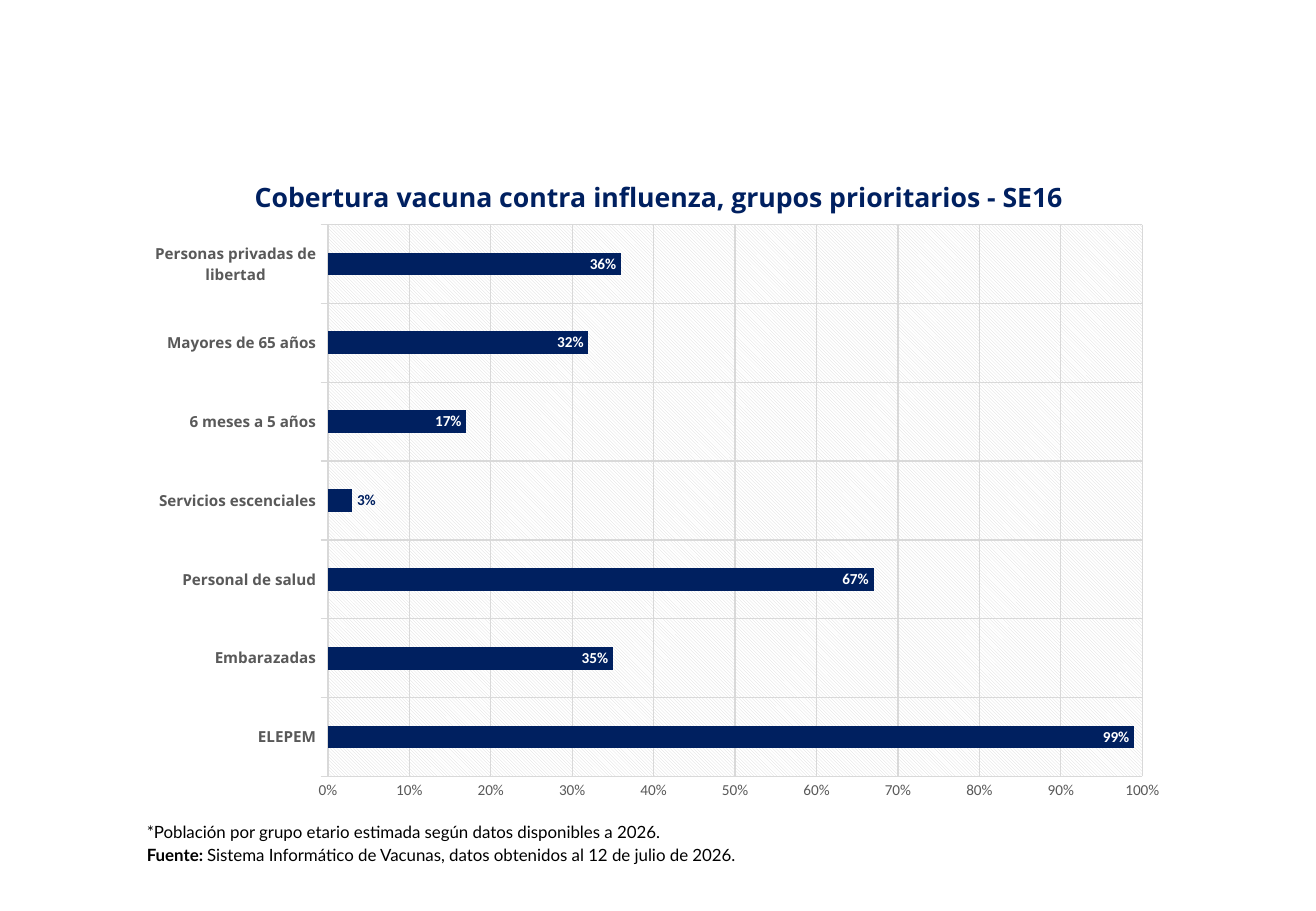
from dataclasses import dataclass

from pptx import Presentation, util as u
from pptx.chart.data import CategoryChartData
from pptx.dml.color import RGBColor
from pptx.enum import chart as ch, text
from pptx.oxml import parse_xml
from pptx.oxml.ns import nsdecls

PX = 9144  # 100 px to the inch
COLORS = {
    "navy": "002060",
    "grid": "D9D9D9",
    "axis": "595959",
    "white": "FFFFFF",
    "black": "000000",
}


@dataclass(frozen=True)
class Style:
    face: str
    size: float
    color: str
    bold: bool = False


@dataclass(frozen=True)
class Group:
    name: str
    coverage: float


@dataclass(frozen=True)
class Run:
    words: str
    bold: bool = False


TITLE = "Cobertura vacuna contra influenza, grupos prioritarios - SE16"
GROUPS = [
    Group("ELEPEM", 0.99),
    Group("Embarazadas", 0.35),
    Group("Personal de salud", 0.67),
    Group("Servicios escenciales", 0.03),
    Group("6 meses a 5 años", 0.17),
    Group("Mayores de 65 años", 0.32),
    Group("Personas privadas de libertad", 0.36),
]
SMALLEST_INSIDE = 0.05  # a shorter bar carries its label outside
NOTES = [
    [Run("*Población por grupo etario estimada según datos disponibles a 2026.")],
    [
        Run("Fuente: ", bold=True),
        Run("Sistema Informático de Vacunas, datos obtenidos al 12 de julio de 2026."),
    ],
]


def px(n: int) -> u.Emu:
    return u.Emu(n * PX)


def rgb(name: str) -> RGBColor:
    return RGBColor.from_string(COLORS[name])


def set_font(font, style: Style) -> None:
    font.name = style.face
    font.size = u.Pt(style.size)
    font.bold = style.bold
    font.color.rgb = rgb(style.color)


def set_grid_line(line) -> None:
    line.color.rgb = rgb("grid")
    line.width = u.Pt(0.75)


def place(parent, index: int, **fractions: float) -> None:
    """Fix a chart part's layout as fractions of the chart area."""
    for old in parent.xpath("c:layout"):
        parent.remove(old)
    target = '<c:layoutTarget val="inner"/>' if "w" in fractions else ""
    modes = "".join(f'<c:{k}Mode val="edge"/>' for k in fractions if k in "xy")
    sizes = "".join(f'<c:{k} val="{v}"/>' for k, v in fractions.items())
    parent.insert(index, parse_xml(
        f'<c:layout {nsdecls("c")}><c:manualLayout>{target}{modes}{sizes}'
        "</c:manualLayout></c:layout>"))


def fill_plot_area(plot_area) -> None:
    """Hatch the background behind the bars."""
    for old in plot_area.xpath("c:spPr"):
        plot_area.remove(old)
    plot_area.append(parse_xml(
        f'<c:spPr {nsdecls("c", "a")}><a:pattFill prst="ltDnDiag">'
        f'<a:fgClr><a:srgbClr val="{COLORS["grid"]}"/></a:fgClr>'
        f'<a:bgClr><a:srgbClr val="{COLORS["white"]}"/></a:bgClr>'
        "</a:pattFill><a:ln><a:noFill/></a:ln></c:spPr>"))


def style_axes(chart) -> None:
    cat, val = chart.category_axis, chart.value_axis
    for axis in (cat, val):
        axis.has_major_gridlines = True
        set_grid_line(axis.major_gridlines.format.line)
        axis.minor_tick_mark = ch.XL_TICK_MARK.NONE
    cat.major_tick_mark = ch.XL_TICK_MARK.OUTSIDE
    set_grid_line(cat.format.line)
    set_font(cat.tick_labels.font, Style("Open Sans", 9, "axis", True))

    val.major_tick_mark = ch.XL_TICK_MARK.NONE
    val.minimum_scale, val.maximum_scale, val.major_unit = 0, 1, 0.1
    val.format.line.fill.background()
    val.tick_labels.number_format = "0%"
    val.tick_labels.number_format_is_linked = False
    set_font(val.tick_labels.font, Style("Calibri", 9, "axis"))


def style_bars(plot) -> None:
    plot.gap_width = 247
    plot.vary_by_categories = False
    series = plot.series[0]
    series.format.fill.solid()
    series.format.fill.fore_color.rgb = rgb("navy")
    series.invert_if_negative = False

    labels = series.data_labels
    labels.show_value = True
    labels.number_format = "0%"
    labels.number_format_is_linked = False
    labels.position = ch.XL_LABEL_POSITION.INSIDE_END
    set_font(labels.font, Style("Calibri", 9, "white", True))
    for i, group in enumerate(GROUPS):
        if group.coverage < SMALLEST_INSIDE:
            label = series.points[i].data_label
            set_font(label.font, Style("Calibri", 9, "navy", True))
            label.position = ch.XL_LABEL_POSITION.OUTSIDE_END


def add_coverage_chart(s) -> None:
    data = CategoryChartData(number_format="0%")
    data.categories = [g.name for g in GROUPS]
    data.add_series("Series 1", [g.coverage for g in GROUPS])
    chart = s.shapes.add_chart(ch.XL_CHART_TYPE.BAR_CLUSTERED, px(111), px(119),
                               px(861), px(550), data).chart
    set_font(chart.font, Style("Calibri", 10, "black"))
    chart.has_legend = False
    chart.has_title = True
    r = chart.chart_title.text_frame.paragraphs[0].add_run()
    r.text = TITLE
    set_font(r.font, Style("Open Sans", 15.8, "navy", True))
    style_axes(chart)
    style_bars(chart.plots[0])

    title = chart.element.xpath("c:chart/c:title")[0]
    plot_area = chart.element.xpath("c:chart/c:plotArea")[0]
    place(title, 1, x=0.11, y=0.04)
    place(plot_area, 0, x=0.1845, y=0.12, w=0.7785, h=0.826)
    fill_plot_area(plot_area)


def add_notes(s) -> None:
    tf = s.shapes.add_textbox(px(111), px(669), px(842), px(48)).text_frame
    tf.word_wrap = True
    tf.auto_size = text.MSO_AUTO_SIZE.SHAPE_TO_FIT_TEXT
    for i, runs in enumerate(NOTES):
        p = tf.add_paragraph() if i else tf.paragraphs[0]
        p.alignment = text.PP_ALIGN.JUSTIFY
        p.line_spacing = 1.15
        for run in runs:
            r = p.add_run()
            r.text = run.words
            set_font(r.font, Style("Lato", 10, "black", run.bold))


def main() -> None:
    prs = Presentation()
    prs.slide_width, prs.slide_height = px(1083), px(750)
    s = prs.slides.add_slide(prs.slide_layouts[6])
    add_notes(s)
    add_coverage_chart(s)
    prs.save("out.pptx")


if __name__ == "__main__":
    main()
